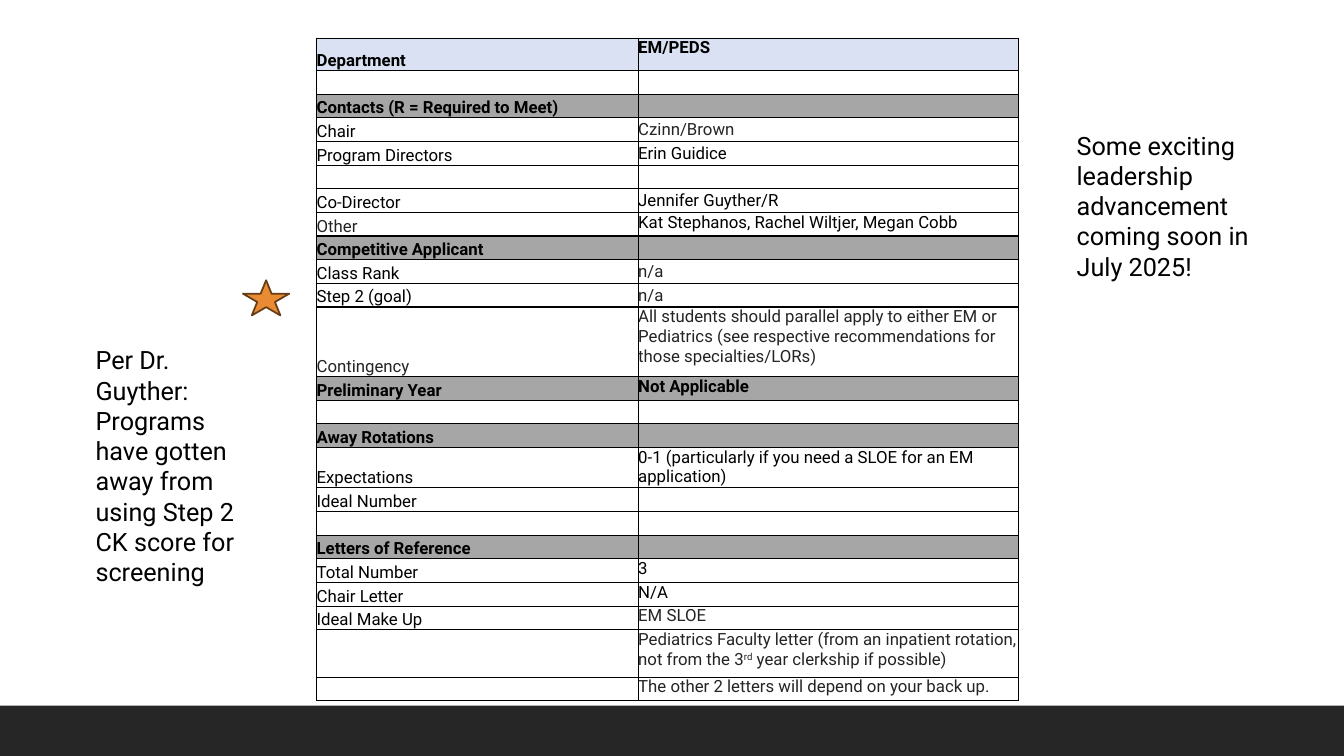
from lxml.etree import SubElement
from pptx import Presentation
from pptx.dml.color import RGBColor
from pptx.enum.shapes import MSO_SHAPE
from pptx.enum.text import MSO_ANCHOR, MSO_AUTO_SIZE
from pptx.oxml.ns import qn
from pptx.util import Inches, Pt

COLORS = {
    "black": "000000", "gray": "242424", "white": "FFFFFF", "footer": "262626",
    "header": "D9E1F2", "section": "A6A6A6", "star": "E88B33", "star_line": "663D16",
}
FONT = "Roboto"
TOP, MIDDLE, BOTTOM = MSO_ANCHOR.TOP, MSO_ANCHOR.MIDDLE, MSO_ANCHOR.BOTTOM

ROWS = [
    ("header", "Department", "EM/PEDS", TOP),
    ("white", "", "", TOP),
    ("section", "Contacts (R = Required to Meet)", "", TOP),
    ("white", "Chair", "Czinn/Brown", MIDDLE),
    ("white", "Program Directors", "Erin Guidice", MIDDLE),
    ("white", "", "", TOP),
    ("white", "Co-Director", "Jennifer Guyther/R", MIDDLE),
    ("white", "Other", "Kat Stephanos, Rachel Wiltjer, Megan Cobb", TOP),
    ("section", "Competitive Applicant", "", TOP),
    ("white", "Class Rank", "n/a", MIDDLE),
    ("white", "Step 2 (goal)", "n/a", MIDDLE),
    ("white", "Contingency", "All students should parallel apply to either EM or Pediatrics "
     "(see respective recommendations for those specialties/LORs)", TOP),
    ("section", "Preliminary Year", "Not Applicable", TOP),
    ("white", "", "", TOP),
    ("section", "Away Rotations", "", TOP),
    ("white", "Expectations", "0-1 (particularly if you need a SLOE for an EM application)", TOP),
    ("white", "Ideal Number", "", TOP),
    ("white", "", "", TOP),
    ("section", "Letters of Reference", "", TOP),
    ("white", "Total Number", "3", TOP),
    ("white", "Chair Letter", "N/A", TOP),
    ("white", "Ideal Make Up", "EM SLOE", TOP),
    ("white", "", "Pediatrics Faculty letter (from an inpatient rotation, "
     "not from the 3^rd^ year clerkship if possible)", TOP),
    ("white", "", "The other 2 letters will depend on your back up.", TOP),
]
GRAY_LABELS = {"Other", "Contingency"}
GRAY_VALUE_ROWS = {3, 9, 10, 11, 21, 22, 23}
TALL_ROWS = {0: 0.32, 11: 0.69, 15: 0.4, 22: 0.47}
COLUMN_WIDTHS = (3.19, 3.77)
TABLE_LEFT, TABLE_TOP, TABLE_HEIGHT = 3.14, 0.38, 6.58

NOTES = [
    ((0.85, 3.37, 1.76, 2.52), "Per Dr. Guyther: Programs have gotten away from using "
     "Step 2 CK score for screening"),
    ((10.58, 1.24, 2.03, 1.62), "Some exciting leadership advancement coming soon in July 2025!"),
]


def color_of(name):
    return RGBColor.from_string(COLORS[name])


def write_text(frame, text, size=12, color="black", bold=False):
    paragraph = frame.paragraphs[0]
    if not text:
        SubElement(paragraph._p, qn("a:endParaRPr"), sz=str(size * 100))
        return
    for index, part in enumerate(text.split("^")):
        run = paragraph.add_run()
        run.text = part
        run.font.name = FONT
        run.font.size = Pt(size)
        run.font.bold = bold
        run.font.color.rgb = color_of(color)
        if index % 2:
            run.font._element.set("baseline", "30000")


def add_borders(cell):
    properties = cell._tc.get_or_add_tcPr()
    for side in ("lnL", "lnR", "lnT", "lnB"):
        line = SubElement(properties, qn(f"a:{side}"), w=str(Pt(1)))
        fill = SubElement(line, qn("a:solidFill"))
        SubElement(fill, qn("a:srgbClr"), val=COLORS["black"])


def add_shape(slide, kind, box, fill, line=None):
    shape = slide.shapes.add_shape(kind, *map(Inches, box))
    shape.shadow.inherit = False
    shape.fill.solid()
    shape.fill.fore_color.rgb = color_of(fill)
    if line:
        shape.line.color.rgb = color_of(line)
        shape.line.width = Pt(1.25)
    else:
        shape.line.fill.background()


def add_note(slide, box, text):
    frame = slide.shapes.add_textbox(*map(Inches, box)).text_frame
    frame.word_wrap = True
    frame.auto_size = MSO_AUTO_SIZE.SHAPE_TO_FIT_TEXT
    write_text(frame, text, size=18)


def add_department_table(slide):
    table = slide.shapes.add_table(
        len(ROWS), 2, Inches(TABLE_LEFT), Inches(TABLE_TOP),
        Inches(sum(COLUMN_WIDTHS)), Inches(TABLE_HEIGHT)).table
    table.first_row = table.horz_banding = False
    for column, width in zip(table.columns, COLUMN_WIDTHS):
        column.width = Inches(width)
    plain_height = (TABLE_HEIGHT - sum(TALL_ROWS.values())) / (len(ROWS) - len(TALL_ROWS))
    for index, (fill, label, value, anchor) in enumerate(ROWS):
        table.rows[index].height = Inches(TALL_ROWS.get(index, plain_height))
        cells = [
            (label, BOTTOM, label in GRAY_LABELS),
            (value, anchor, index in GRAY_VALUE_ROWS),
        ]
        for column, (text, vertical, is_gray) in enumerate(cells):
            cell = table.cell(index, column)
            cell.margin_left = cell.margin_right = cell.margin_top = cell.margin_bottom = 0
            cell.vertical_anchor = vertical
            add_borders(cell)
            cell.fill.solid()
            cell.fill.fore_color.rgb = color_of(fill)
            write_text(cell.text_frame, text, color="gray" if is_gray else "black",
                       bold=fill != "white")


def main():
    presentation = Presentation()
    presentation.slide_width = Inches(13.33)
    presentation.slide_height = Inches(7.5)
    slide = presentation.slides.add_slide(presentation.slide_layouts[6])
    add_shape(slide, MSO_SHAPE.RECTANGLE, (0, 7, 13.33, 0.5), "footer")
    add_department_table(slide)
    add_shape(slide, MSO_SHAPE.STAR_5_POINT, (2.41, 2.78, 0.46, 0.35), "star", "star_line")
    for box, text in NOTES:
        add_note(slide, box, text)
    presentation.save("out.pptx")


if __name__ == "__main__":
    main()
